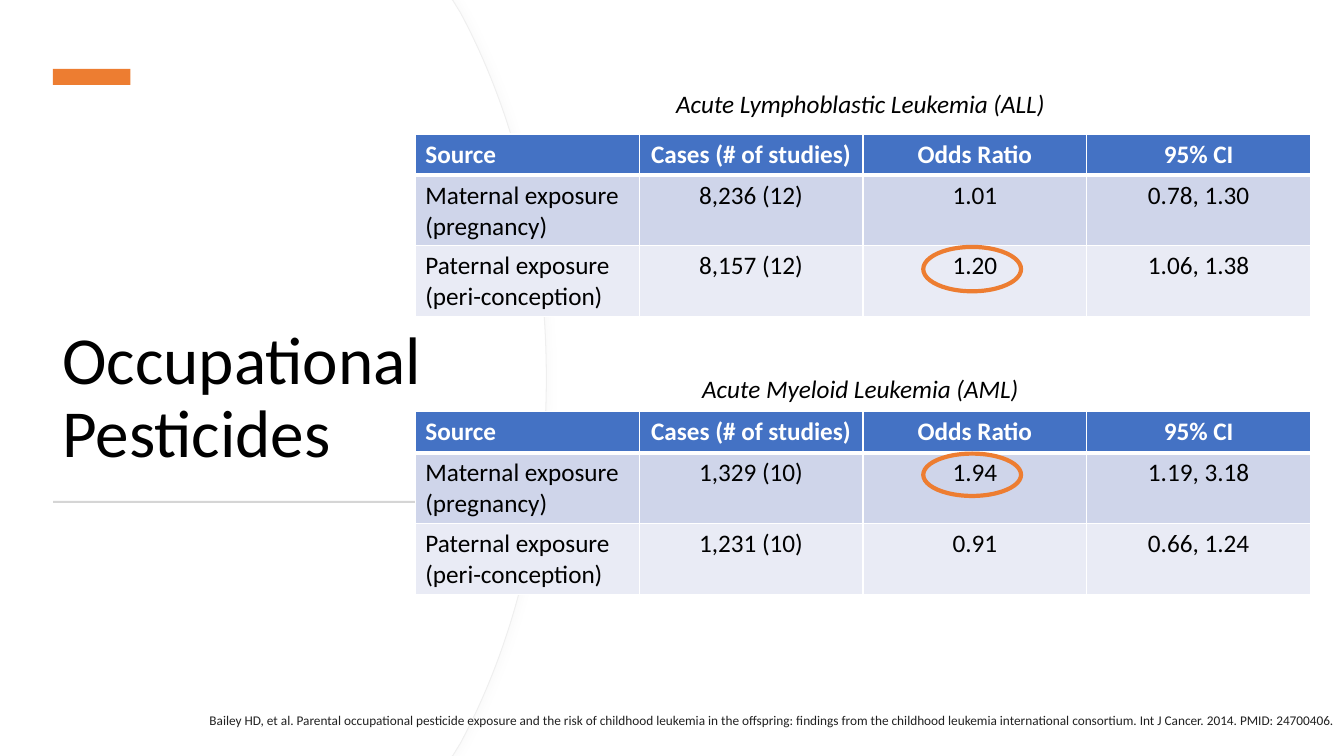
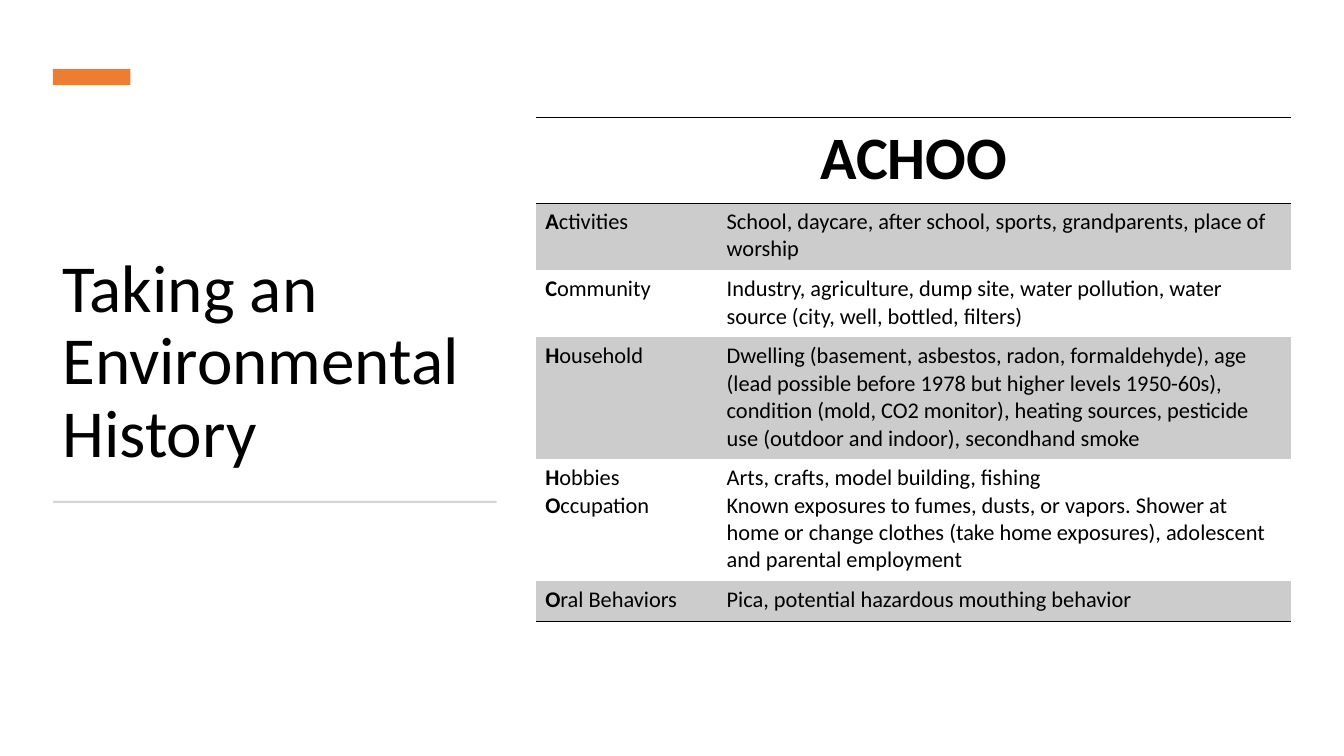
from collections import namedtuple

from lxml import etree
from pptx import Presentation
from pptx import util as u
from pptx.dml import color
from pptx.enum import shapes, text
from pptx.oxml import ns

COLUMNS, ROWS = 160, 90
CELL = u.Inches(1) / 12
FONT = "Calibri"
BLACK, WHITE = "000000", "FFFFFF"
ORANGE, RULE_GREY, CITATION_GREY = "ED7D31", "D5D5D5", "212121"
ARC_LINE, ARC_SHADOW = "EFEFEF", "D9D9D9"
HEADER_BLUE, BAND_DARK, BAND_LIGHT, BAND_GREY = "4472C4", "CFD5EA", "E9EBF5", "CCCCCC"
PLAIN_TABLE_STYLE = "{2D5ABB26-0587-4C30-8999-92F81FD0307C}"
LEFT, CENTER, RIGHT = text.PP_ALIGN.LEFT, text.PP_ALIGN.CENTER, text.PP_ALIGN.RIGHT

Box = namedtuple("Box", "left top width height")
SLIDE_BOX = Box(0, 0, COLUMNS, ROWS)
HEADING_BOX = Box(6.3, 8.2, 52.8, 51.6)
CITATION_BOX = Box(3.12, 84.12, 156.96, 3.12)
ALL_BOX = Box(49.44, 9.96, 106.6, 27.7)
AML_BOX = Box(49.44, 43.86, 106.6, 26.86)
HISTORY_BOX = Box(63.84, 13.98, 89.88, 60)

CITATION = (
    "Bailey HD, et al. Parental occupational pesticide exposure and the risk of childhood "
    "leukemia in the offspring: findings from the childhood leukemia international consortium. "
    "Int J Cancer. 2014. PMID: 24700406."
)
STUDY_HEADER = ["Source", "Cases (# of studies)", "Odds Ratio", "95% CI"]
MATERNAL = "Maternal exposure (pregnancy)"
PATERNAL = "Paternal exposure\n(peri-conception)"
ALL_RESULTS = [
    [MATERNAL, "8,236 (12)", "1.01", "0.78, 1.30"],
    [PATERNAL, "8,157 (12)", "1.20", "1.06, 1.38"],
]
AML_RESULTS = [
    [MATERNAL, "1,329 (10)", "1.94", "1.19, 3.18"],
    [PATERNAL, "1,231 (10)", "0.91", "0.66, 1.24"],
]
HISTORY_TOPICS = [
    ("Activities", "School, daycare, after school, sports, grandparents, place of worship", 8),
    (
        "Community",
        "Industry, agriculture, dump site, water pollution, water source "
        "(city, well, bottled, filters)",
        8,
    ),
    (
        "Household",
        "Dwelling (basement, asbestos, radon, formaldehyde), age (lead possible before 1978 "
        "but higher levels 1950-60s), condition (mold, CO2 monitor), heating sources, "
        "pesticide use (outdoor and indoor), secondhand smoke",
        14.5,
    ),
    (
        "Hobbies\nOccupation",
        "Arts, crafts, model building, fishing\n"
        "Known exposures to fumes, dusts, or vapors. Shower at home or change clothes "
        "(take home exposures), adolescent and parental employment",
        14.5,
    ),
    ("Oral Behaviors", "Pica, potential hazardous mouthing behavior", 4.8),
]


def rgb(value):
    return color.RGBColor.from_string(value)


def grid(cells):
    return u.Emu(round(cells * CELL))


def within(box, left, top, width, height):
    return Box(box.left + left, box.top + top, width, height)


def emu(box):
    return [grid(value) for value in box]


def paint(shape, fill=None, line=None, weight=1):
    shape.shadow.inherit = False
    if fill:
        shape.fill.solid()
        shape.fill.fore_color.rgb = rgb(fill)
    else:
        shape.fill.background()
    if line:
        shape.line.color.rgb = rgb(line)
        shape.line.width = u.Pt(weight)
    else:
        shape.line.fill.background()


def write(frame, content, size, ink=BLACK, bold=False, italic=False, align=LEFT,
          spacing=None, bold_initial=False):
    for index, line in enumerate(content.split("\n")):
        paragraph = frame.add_paragraph() if index else frame.paragraphs[0]
        paragraph.alignment = align
        if spacing:
            paragraph.line_spacing = spacing
        pieces = [(line[0], True), (line[1:], False)] if bold_initial else [(line, bold)]
        for piece, heavy in pieces:
            run = paragraph.add_run()
            run.text = piece
            run.font.name = FONT
            run.font.size = u.Pt(size)
            run.font.bold = heavy
            run.font.italic = italic
            run.font.color.rgb = rgb(ink)


def add_label(slide, box, content, size, anchor=text.MSO_ANCHOR.TOP, **style):
    frame = slide.shapes.add_textbox(*emu(box)).text_frame
    frame.word_wrap = True
    frame.vertical_anchor = anchor
    write(frame, content, size, **style)


def add_preset(slide, kind, box, **style):
    paint(slide.shapes.add_shape(kind, *emu(box)), **style)


def add_plain_table(slide, box, widths, heights):
    place = box._replace(height=sum(heights))
    table = slide.shapes.add_table(len(heights), len(widths), *emu(place)).table
    table.first_row = table.horz_banding = False
    table._tbl.tblPr.find(ns.qn("a:tableStyleId")).text = PLAIN_TABLE_STYLE
    for column, width in zip(table.columns, widths):
        column.width = grid(width)
    for row, height in zip(table.rows, heights):
        row.height = grid(height)
    return table


def style_cell(cell, borders, fill=None):
    properties = cell._tc.get_or_add_tcPr()
    for side in "LRTB":
        if side in borders:
            ink, weight = borders[side]
            edge = etree.SubElement(properties, ns.qn(f"a:ln{side}"), w=str(u.Pt(weight)))
            solid = etree.SubElement(edge, ns.qn("a:solidFill"))
            etree.SubElement(solid, ns.qn("a:srgbClr"), val=ink)
    if fill:
        cell.fill.solid()
        cell.fill.fore_color.rgb = rgb(fill)
    else:
        cell.fill.background()


def tighten(cell):
    cell.margin_left = cell.margin_right = u.Inches(0.09)
    cell.margin_top = cell.margin_bottom = u.Inches(0.05)


def curve_segments(shape, first, count):
    segments = list(shape._element.iter(ns.qn("a:lnTo")))
    for start in range(first, first + 3 * count, 3):
        anchor, *others = segments[start:start + 3]
        anchor.tag
        curve = etree.Element(ns.qn("a:cubicBezTo"))
        anchor.addprevious(curve)
        for segment in (anchor, *others):
            curve.append(segment[0])
            segment.getparent().remove(segment)


def add_shadow(shape):
    effects = shape._element.spPr.find(ns.qn("a:effectLst"))
    shadow = etree.SubElement(effects, ns.qn("a:outerShdw"), blurRad=str(u.Pt(4)),
                              dist=str(u.Pt(3)), dir="0", algn="l", rotWithShape="0")
    ink = etree.SubElement(shadow, ns.qn("a:srgbClr"), val=ARC_SHADOW)
    etree.SubElement(ink, ns.qn("a:alpha"), val="10000")


def arc_backdrop(slide, box):
    upper = [(53.88, 0), (54.84, 1.56), (61.32, 13.68), (65.04, 28.68)]
    lower = [(x, box.height - y) for x, y in reversed(upper)]
    outline = [*upper, (65.04, box.height / 2), *lower, (0, box.height)]
    for inset, line in ((0, ARC_LINE), (0.12, None)):
        points = [(grid(box.left + max(x - inset, 0)), grid(box.top + y)) for x, y in outline]
        builder = slide.shapes.build_freeform(grid(box.left), grid(box.top))
        builder.add_line_segments(points, close=True)
        shape = builder.convert_to_shape()
        curve_segments(shape, 2, 2)
        paint(shape, fill=WHITE, line=line, weight=0.75)
        if line:
            add_shadow(shape)


def heading_panel(slide, box, title):
    rectangle = shapes.MSO_SHAPE.RECTANGLE
    add_label(slide, within(box, -0.06, 6.56, box.width, 42), title, 48,
              anchor=text.MSO_ANCHOR.BOTTOM, spacing=0.9)
    add_preset(slide, rectangle, within(box, 0, 0, 9.24, 1.92), fill=ORANGE)
    add_preset(slide, rectangle, within(box, 0.03, 51.44, box.width, 0.24), fill=RULE_GREY)


def study_table(slide, box, caption, results, circle_top, circle_height):
    heights = [4.9, 8.4, 8.4]
    widths = [box.width / len(STUDY_HEADER)] * len(STUDY_HEADER)
    table_top = box.height - sum(heights)
    table = add_plain_table(slide, within(box, 0, table_top, box.width, 0), widths, heights)
    fills = [HEADER_BLUE, BAND_DARK, BAND_LIGHT]
    for row, values in enumerate([STUDY_HEADER, *results]):
        header = row == 0
        borders = dict.fromkeys("LRTB", (WHITE, 1))
        if row < 2:
            borders["B" if header else "T"] = (WHITE, 3)
        for column, value in enumerate(values):
            cell = table.cell(row, column)
            style_cell(cell, borders, fills[row])
            write(cell.text_frame, value, 18, ink=WHITE if header else BLACK, bold=header,
                  align=CENTER if column else LEFT)
    add_label(slide, within(box, -0.3, 0, box.width, 4.8), caption, 18, italic=True, align=CENTER)
    circle = within(box, 60.48, table_top + circle_top, 11.64, circle_height)
    add_preset(slide, shapes.MSO_SHAPE.OVAL, circle, line=ORANGE, weight=3)


def history_table(slide, box, heading, topics):
    heights = [10.2, *(height for _, _, height in topics)]
    table = add_plain_table(slide, box, [21.6, box.width - 21.6], heights)
    rule = (BLACK, 1)
    title_cell = table.cell(0, 0)
    title_cell.merge(table.cell(0, 1))
    style_cell(title_cell, {"T": rule, "B": rule})
    tighten(title_cell)
    write(title_cell.text_frame, heading, 43, bold=True, align=CENTER)
    for row, (topic, details, _) in enumerate(topics, 1):
        borders = {"B": rule} if row == len(topics) else {}
        for column, value in enumerate((topic, details)):
            cell = table.cell(row, column)
            style_cell(cell, borders, BAND_GREY if row % 2 else None)
            tighten(cell)
            write(cell.text_frame, value, 16, bold_initial=column == 0)


def pesticides_slide(slide):
    arc_backdrop(slide, SLIDE_BOX)
    heading_panel(slide, HEADING_BOX, "Occupational Pesticides")
    add_label(slide, CITATION_BOX, CITATION, 9.5, ink=CITATION_GREY, align=RIGHT, spacing=1.07)
    study_table(slide, ALL_BOX, "Acute Lymphoblastic Leukemia (ALL)", ALL_RESULTS, 13.44, 5.28)
    study_table(slide, AML_BOX, "Acute Myeloid Leukemia (AML)", AML_RESULTS, 4.98, 5.04)


def history_slide(slide):
    heading_panel(slide, HEADING_BOX, "Taking an Environmental History")
    history_table(slide, HISTORY_BOX, "ACHOO", HISTORY_TOPICS)


def main():
    presentation = Presentation()
    presentation.slide_width = grid(COLUMNS)
    presentation.slide_height = grid(ROWS)
    for build in (pesticides_slide, history_slide):
        build(presentation.slides.add_slide(presentation.slide_layouts[6]))
    presentation.save("out.pptx")


if __name__ == "__main__":
    main()
